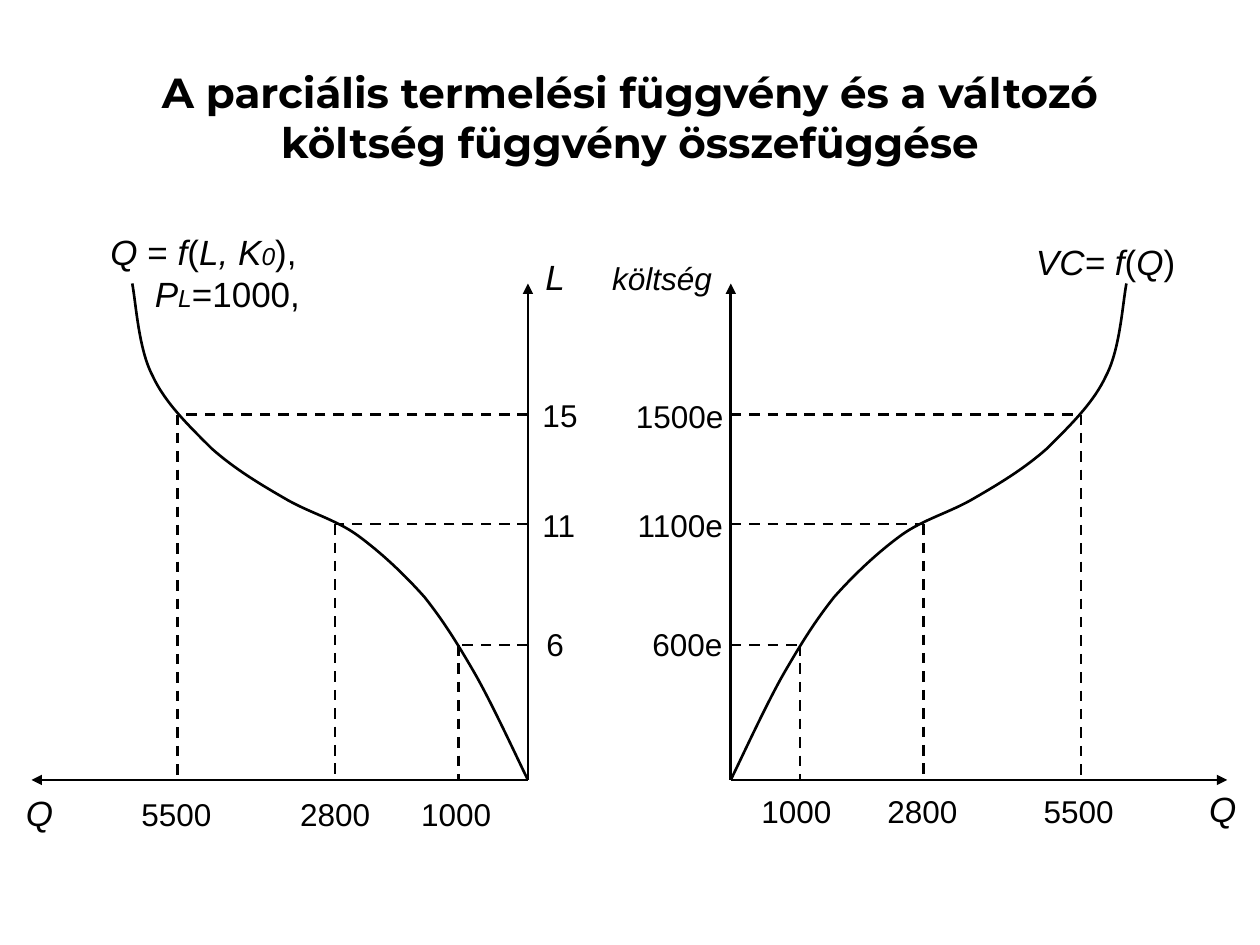
from lxml import etree
from pptx import Presentation
from pptx.dml.color import RGBColor
from pptx.enum.dml import MSO_LINE
from pptx.enum.shapes import MSO_CONNECTOR
from pptx.enum.text import MSO_ANCHOR, PP_ALIGN
from pptx.oxml.ns import qn
from pptx.util import Inches, Pt

DASH = MSO_LINE.DASH
STRAIGHT = MSO_CONNECTOR.STRAIGHT
MIDDLE, TOP = MSO_ANCHOR.MIDDLE, MSO_ANCHOR.TOP
CENTER = PP_ALIGN.CENTER


def paint(code):
    return RGBColor.from_string(code)


class Board:
    """Draws on one slide, with lengths in cells of a 100 by 75 grid."""

    ink, font, weight = "000000", "Arial", 1.5

    def __init__(self, deck):
        deck.slide_width, deck.slide_height = Inches(10), Inches(7.5)
        self.cell = deck.slide_width / 100
        self.slide = deck.slides.add_slide(deck.slide_layouts[6])
        self.shapes = self.slide.shapes

    def at(self, *cells):
        return [round(cell * self.cell) for cell in cells]

    def stroke(self, line):
        line.color.rgb = paint(self.ink)
        line.width = Pt(self.weight)

    def text(self, mid, top, wide, high, runs, size=18, font=None,
             bold=False, hang=3.8, anchor=TOP):
        box = self.shapes.add_textbox(*self.at(mid - wide / 2, top, wide, high))
        frame = box.text_frame
        frame.word_wrap = True
        frame.vertical_anchor = anchor
        para = frame.paragraphs[0]
        para.alignment = CENTER
        props = para._p.get_or_add_pPr()
        indent, = self.at(hang)
        props.set("marL", str(indent))
        props.set("indent", str(-indent))
        for words, slant, *small in runs:
            run = para.add_run()
            run.text = words
            run.font.name = font or self.font
            run.font.size = Pt(small[0] if small else size)
            run.font.bold = bold
            run.font.italic = slant
            run.font.color.rgb = paint(self.ink)

    def line(self, start, end, dash=False, arrow=False):
        rule = self.shapes.add_connector(STRAIGHT, *self.at(*start, *end))
        self.stroke(rule.line)
        if dash:
            rule.line.dash_style = DASH
        if arrow:
            etree.SubElement(rule.line._get_or_add_ln(), qn("a:tailEnd"), type="triangle")
        etree.SubElement(rule._element.spPr, qn("a:effectLst"))

    def curve(self, points):
        first, *rest = [self.at(*point) for point in points]
        pen = self.shapes.build_freeform(*first)
        pen.add_line_segments(rest, close=False)
        shape = pen.convert_to_shape()
        shape.shadow.inherit = False
        shape.fill.background()
        self.stroke(shape.line)
        route = shape._element.spPr.find(".//" + qn("a:path"))
        steps = route.findall(qn("a:lnTo"))
        for i in range(0, len(steps), 3):
            bend = etree.SubElement(route, qn("a:cubicBezTo"))
            for step in steps[i:i + 3]:
                bend.append(step[0])
                route.remove(step)


BASE, PEAK = 61.9, 22.5
# Each point is the distance from the vertical axis and the height on the slide.
BENDS = [(0, 61.9), (0.7, 60.5), (2.9, 55.7), (4.3, 53.3), (5.7, 50.9),
         (6.7, 49.3), (8.2, 47.4), (9.8, 45.6), (11.6, 43.9), (13.5, 42.5),
         (15.3, 41.2), (17.4, 40.7), (19.4, 39.5), (21.3, 38.4), (23.3, 37.2),
         (25.1, 35.6), (26.8, 33.9), (28.8, 32), (29.8, 29.8), (30.9, 27.7),
         (31.1, 24.1), (31.4, 22.5)]
MARKS = [(5.5, 51.2), (15.3, 41.6), (27.8, 32.9)]
NAMES = ["1000", "2800", "5500"]
SIDES = [
    (41.9, -1, 62.6, (36.2, 26.6, 14),
     [("6", 44.05, 49.1), ("11", 44.35, 39.7), ("15", 44.45, 30.9)]),
    (58, 1, 62.4, (63.2, 73.2, 85.6),
     [("600e", 54.55, 49.1), ("1100e", 54, 39.7), ("1500e", 53.95, 31)]),
]
SIGNS = [
    (44.05, 19.8, 6.3, 4.3, 20, [("L", True)]),
    (3.15, 62.3, 6.3, 4.3, 20, [("Q", True)]),
    (97.05, 62, 6.3, 4.3, 20, [("Q", True)]),
    (52.55, 20.1, 13.9, 4, 18, [("költség", True)]),
    (87.75, 18.6, 15.7, 4.3, 20,
     [("VC= f", True), ("(", False), ("Q", True), (")", False)]),
    (16.15, 17.8, 18.9, 7.7, 20,
     [("Q", True), (" = ", False), ("f", True), ("(", False), ("L, K", True),
      ("0", True, 14), ("),", False), (" P", True), ("L", True, 14),
      ("=1000,", False)]),
]


def main():
    deck = Presentation()
    board = Board(deck)
    title = "A parciális termelési függvény és a változó költség függvény összefüggése"
    board.text(50, 3, 90, 12.5, [(title, False)], 24, "Montserrat", True, 0, MIDDLE)
    for axis, way, low, mids, ticks in SIDES:
        board.curve([(axis + way * gap, y) for gap, y in BENDS])
        board.line((axis, BASE), (axis, PEAK), arrow=True)
        board.line((axis, BASE), (axis + way * 39.4, BASE), arrow=True)
        for (gap, y), name, mid, (tick, x, top) in zip(MARKS, NAMES, mids, ticks):
            spot = axis + way * gap, y
            board.line((axis, y), spot, dash=True)
            board.line(spot, (spot[0], BASE), dash=True)
            board.text(mid, low, 9.4, 4, [(name, False)])
            board.text(x, top, 11, 4, [(tick, False)])
    for mid, top, wide, high, size, runs in SIGNS:
        board.text(mid, top, wide, high, runs, size)
    deck.save("out.pptx")


if __name__ == "__main__":
    main()
